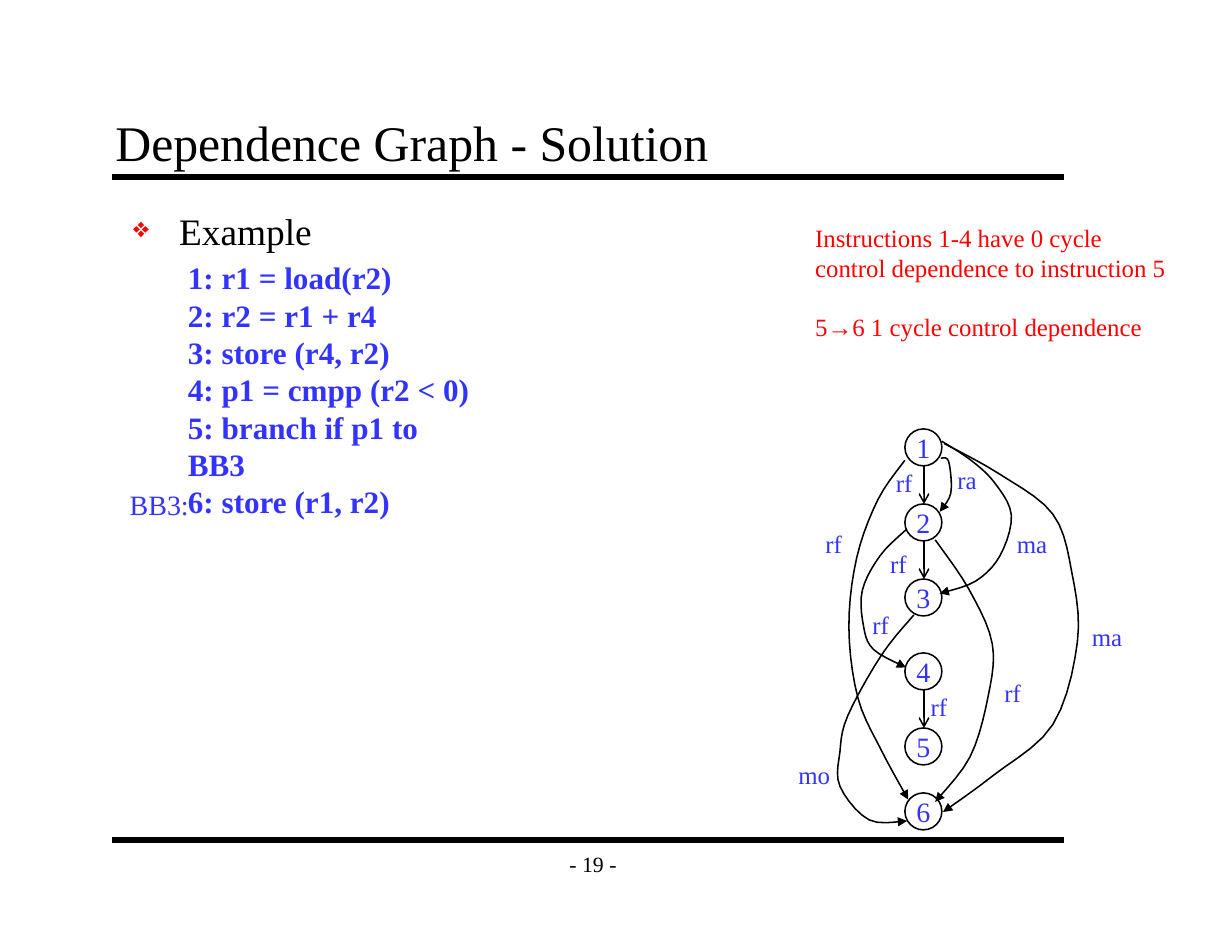
from lxml import etree
from pptx import Presentation
from pptx.dml.color import RGBColor
from pptx.enum.shapes import MSO_CONNECTOR as CONN, MSO_SHAPE as SHAPE
from pptx.enum.text import MSO_ANCHOR as ANCHOR, MSO_AUTO_SIZE as AUTO, PP_ALIGN as ALIGN
from pptx.oxml.ns import qn
from pptx.util import Inches, Pt

BLACK = RGBColor(0x00, 0x00, 0x00)
BLUE = RGBColor(0x33, 0x33, 0xFF)
RED = RGBColor(0xFF, 0x00, 0x00)
FONT = "Times New Roman"

NODE_X, NODE_SIZE = 8.08, 0.33
NODE_TOPS = [3.83, 4.5, 5.17, 5.83, 6.5, 7.08]
STRAIGHT_EDGES = [(1, 2), (2, 3), (4, 5)]

CODE = """1: r1 = load(r2)
2: r2 = r1 + r4
3: store (r4, r2)
4: p1 = cmpp (r2 < 0)
5: branch if p1 to BB3
6: store (r1, r2)"""

LABEL_WIDTHS = {"rf": 0.35, "ra": 0.38, "ma": 0.48, "mo": 0.49}
EDGE_LABELS = {
    "rf": [(7.9, 4.13), (7.27, 4.67), (7.85, 4.85), (8.87, 6), (8.21, 6.13), (7.69, 5.39)],
    "ra": [(8.45, 4.1)],
    "ma": [(9.65, 5.5), (8.98, 4.67)],
    "mo": [(7.03, 6.73)],
}

CURVED_EDGES = {
    "1 to 6 rf": [(8.08, 4.11), (7.84, 4.46), (7.65, 4.98), (7.58, 5.6),
                  (7.66, 6.23), (7.87, 6.7), (8.11, 7.14)],
    "2 to 6 rf": [(8.35, 4.82), (8.65, 5.26), (8.86, 5.75), (8.82, 6.23),
                  (8.66, 6.76), (8.35, 7.16)],
    "1 to 2 ra": [(8.4, 4.09), (8.47, 4.12), (8.49, 4.4), (8.39, 4.57)],
    "2 to 4 rf": [(8.09, 4.73), (7.86, 4.96), (7.7, 5.27), (7.71, 5.59),
                  (7.8, 5.8), (8.09, 5.96)],
    "1 to 3 ma": [(8.41, 3.94), (8.67, 4.11), (8.88, 4.31), (9.03, 4.6),
                  (8.93, 4.96), (8.71, 5.19), (8.39, 5.3)],
    "1 to 6 ma": [(8.43, 3.96), (8.92, 4.23), (9.4, 4.59), (9.57, 5.11),
                  (9.62, 5.73), (9.4, 6.47), (8.86, 6.93), (8.42, 7.25)],
    "3 to 6 mo": [(8.16, 5.49), (7.87, 5.85), (7.57, 6.39), (7.5, 6.71),
                  (7.5, 7.02), (7.76, 7.32), (8.1, 7.33)],
}


def write(sp, text, size=16, color=BLUE, bold=False, align=ALIGN.LEFT,
          anchor=ANCHOR.TOP, wrap=False, inset=(0.1, 0.05), gap=0):
    tf = sp.text_frame
    tf.word_wrap, tf.vertical_anchor = wrap, anchor
    tf.margin_left = tf.margin_right = Inches(inset[0])
    tf.margin_top = tf.margin_bottom = Inches(inset[1])
    for i, line in enumerate(text.split("\n")):
        p = tf.add_paragraph() if i else tf.paragraphs[0]
        p.text, p.alignment = line, align
        if gap and i:
            p.space_before = Pt(gap)
        for r in p.runs:
            r.font.name, r.font.size, r.font.bold = FONT, Pt(size), bold
            r.font.color.rgb = color
    return tf


def add_text(s, text, left, top, width, height, grow=False, **fmt):
    sp = s.shapes.add_textbox(Inches(left), Inches(top), Inches(width), Inches(height))
    tf = write(sp, text, **fmt)
    if grow:
        tf.auto_size = AUTO.SHAPE_TO_FIT_TEXT
    return tf


def add_bullet(p, char, color, indent):
    pPr = p._p.get_or_add_pPr()
    pPr.set("marL", str(Inches(indent)))
    pPr.set("indent", str(-Inches(indent)))
    clr = etree.SubElement(pPr, qn("a:buClr"))
    etree.SubElement(clr, qn("a:srgbClr"), val=str(color))
    etree.SubElement(pPr, qn("a:buSzPct"), val="75000")
    etree.SubElement(pPr, qn("a:buChar"), char=char)


def style_line(sp, width=1, head=None):
    sp.line.color.rgb, sp.line.width = BLACK, Pt(width)
    if head:
        etree.SubElement(sp.line._get_or_add_ln(), qn("a:tailEnd"), type=head)


def add_line(s, x1, y1, x2, y2, **style):
    cx = s.shapes.add_connector(CONN.STRAIGHT, Inches(x1), Inches(y1), Inches(x2), Inches(y2))
    style_line(cx, **style)
    etree.SubElement(cx._element.spPr, qn("a:effectLst"))


def smooth(points, steps=5):
    padded = [points[0], *points, points[-1]]
    for quad in zip(padded, padded[1:], padded[2:], padded[3:]):
        for t in (k / steps for k in range(1, steps + 1)):
            yield tuple(
                Inches(b + t * (c - a + t * (2 * a - 5 * b + 4 * c - d
                                             + t * (3 * b - a - 3 * c + d))) / 2)
                for a, b, c, d in zip(*quad))


def add_curve(s, points):
    fb = s.shapes.build_freeform(*map(Inches, points[0]))
    fb.add_line_segments(list(smooth(points)), close=False)
    sp = fb.convert_to_shape()
    sp.shadow.inherit = False
    sp.fill.background()
    style_line(sp, head="triangle")


def add_node(s, name, top):
    sp = s.shapes.add_shape(SHAPE.OVAL, Inches(NODE_X), Inches(top),
                            Inches(NODE_SIZE), Inches(NODE_SIZE))
    sp.shadow.inherit = False
    sp.fill.background()
    style_line(sp)
    write(sp, name, size=18, align=ALIGN.CENTER, anchor=ANCHOR.MIDDLE)


def add_graph(s):
    for number, top in enumerate(NODE_TOPS, 1):
        add_node(s, str(number), top)
    for a, b in STRAIGHT_EDGES:
        add_line(s, 8.25, NODE_TOPS[a - 1] + NODE_SIZE, 8.25, NODE_TOPS[b - 1], head="arrow")
    for points in CURVED_EDGES.values():
        add_curve(s, points)
    for text, places in EDGE_LABELS.items():
        for left, top in places:
            add_text(s, text, left, top, LABEL_WIDTHS[text], 0.37, grow=True)


def main():
    prs = Presentation()
    prs.slide_width, prs.slide_height = Inches(11), Inches(8.5)
    s = prs.slides.add_slide(prs.slide_layouts[6])
    frame = dict(color=BLACK, inset=(0.11, 0.06))
    for y in (1.58, 7.5):
        add_line(s, 1, y, 9.5, y, width=4)
    add_text(s, "- 19 -", 4.92, 7.5, 0.75, 0.42, size=14,
             align=ALIGN.CENTER, anchor=ANCHOR.MIDDLE, **frame)
    add_text(s, "Dependence Graph - Solution", 0.92, 0.92, 8.5, 0.67, size=32,
             anchor=ANCHOR.BOTTOM, wrap=True, **frame)
    tf = add_text(s, "Example", 1.08, 1.8, 5.33, 5.7, size=24, wrap=True, **frame)
    p = tf.paragraphs[0]
    p.space_before = Pt(5)
    add_bullet(p, "❖", RED, 0.41)
    add_text(s, CODE, 1.58, 2.26, 2.8, 2.1, size=20, bold=True, wrap=True)
    add_text(s, "BB3:", 1.06, 4.3, 0.73, 0.4, grow=True, size=18)
    add_graph(s)
    add_text(s, "Instructions 1-4 have 0 cycle\vcontrol dependence to instruction 5\n"
             "5→6 1 cycle control dependence", 7.18, 1.94, 3.38, 1.18, color=RED, gap=19)
    prs.save("out.pptx")


if __name__ == "__main__":
    main()
